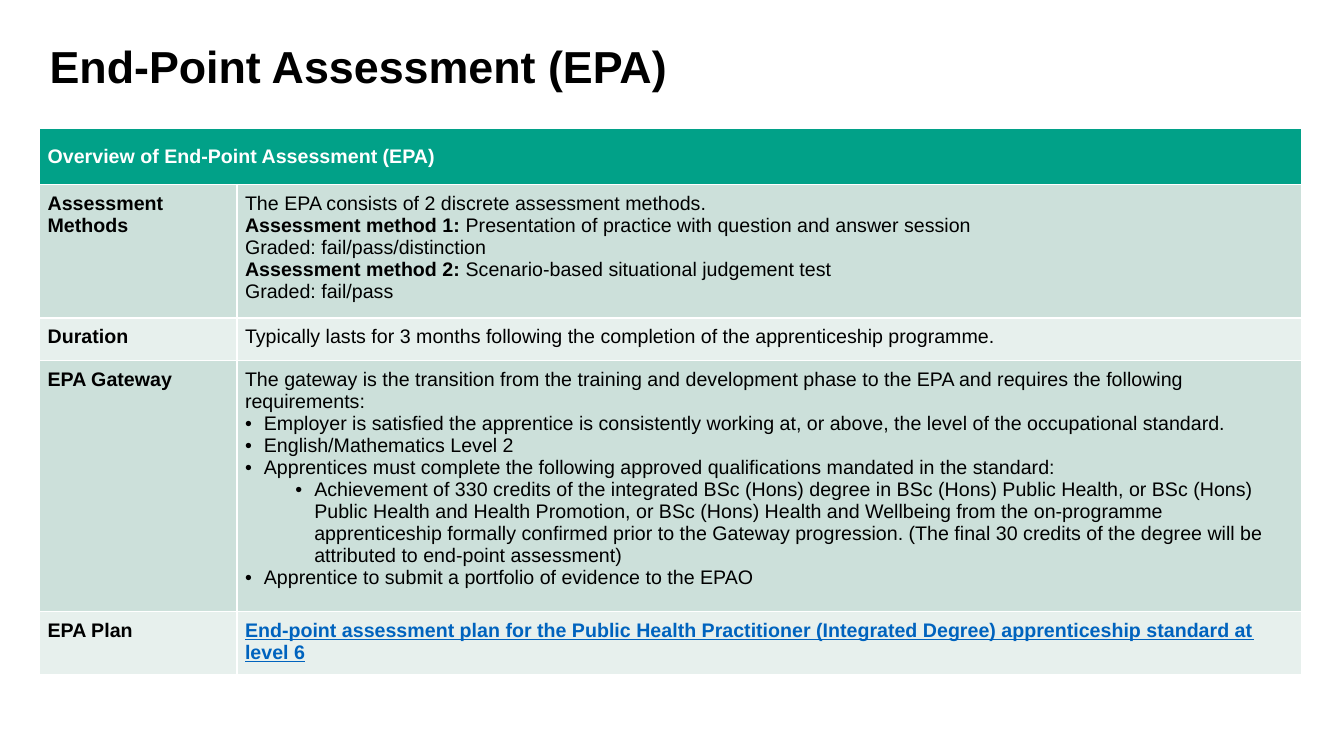
from dataclasses import dataclass

from lxml.etree import SubElement
from pptx import Presentation
from pptx.dml.color import RGBColor
from pptx.enum.text import MSO_ANCHOR
from pptx.oxml.ns import qn
from pptx.util import Pt

FONT = "Arial"
BLACK, WHITE, LINK = "000000", "FFFFFF", "0063BE"
GREEN, DARK, LIGHT = "01A188", "CCE0DA", "E7F0ED"
LEFT, WIDTH = 28.35, 901.2
COLS = (141, 760.2)
HEAD = "Overview of End-Point Assessment (EPA)"
HEAD_TALL = 40.25
PAD = 5.67
HANG = 13.5  # room for a bullet
STEP = 36  # further indent of each bullet level


@dataclass
class Para:
    text: str
    lead: str = ""
    level: int = 0  # 0 plain, 1 and up bulleted
    link: bool = False


@dataclass
class Row:
    label: str
    tall: float
    paras: list[Para]


ROWS = [
    Row("Assessment Methods", 88.75, [
        Para("The EPA consists of 2 discrete assessment methods."),
        Para("Presentation of practice with question and answer session",
             lead="Assessment method 1: "),
        Para("Graded: fail/pass/distinction"),
        Para("Scenario-based situational judgement test",
             lead="Assessment method 2: "),
        Para("Graded: fail/pass"),
    ]),
    Row("Duration", 30.5, [
        Para("Typically lasts for 3 months following the completion of the "
             "apprenticeship programme."),
    ]),
    Row("EPA Gateway", 167, [
        Para("The gateway is the transition from the training and development "
             "phase to the EPA and requires the following requirements:"),
        Para("Employer is satisfied the apprentice is consistently working at, "
             "or above, the level of the occupational standard.", level=1),
        Para("English/Mathematics Level 2", level=1),
        Para("Apprentices must complete the following approved qualifications "
             "mandated in the standard:", level=1),
        Para("Achievement of 330 credits of the integrated BSc (Hons) degree in "
             "BSc (Hons) Public Health, or BSc (Hons) Public Health and Health "
             "Promotion, or BSc (Hons) Health and Wellbeing from the "
             "on-programme apprenticeship formally confirmed prior to the "
             "Gateway progression. (The final 30 credits of the degree will be "
             "attributed to end-point assessment)", level=2),
        Para("Apprentice to submit a portfolio of evidence to the EPAO", level=1),
    ]),
    Row("EPA Plan", 31, [
        Para("End-point assessment plan for the Public Health Practitioner "
             "(Integrated Degree) apprenticeship standard at level 6", link=True),
    ]),
]


def rgb(code: str) -> RGBColor:
    return RGBColor.from_string(code)


def style(font, size: float, color: str, bold: bool) -> None:
    font.name = FONT
    font.size = Pt(size)
    font.bold = bold
    font.color.rgb = rgb(color)


def bullet(para, level: int) -> None:
    para.level = level - 1
    props = para._p.get_or_add_pPr()
    props.set("marL", str(Pt(HANG + STEP * (level - 1))))
    props.set("indent", str(Pt(-HANG)))
    SubElement(props, qn("a:buFont"), typeface=FONT)
    SubElement(props, qn("a:buChar"), char="•")


def paint(cell, fill: str) -> None:
    """Set the fill and the inner margins of a cell."""
    cell.fill.solid()
    cell.fill.fore_color.rgb = rgb(fill)
    cell.margin_left = cell.margin_right = Pt(PAD)
    cell.margin_top = cell.margin_bottom = Pt(PAD)


def label(cell, text: str, color: str) -> None:
    cell.text_frame.text = text
    style(cell.text_frame.paragraphs[0].runs[0].font, 14, color, True)


def write(cell, paras: list[Para]) -> None:
    frame = cell.text_frame
    frame.text = "\n".join(item.lead + item.text for item in paras)
    for para, item in zip(frame.paragraphs, paras):
        if item.level:
            bullet(para, item.level)
        run = para.runs[0]
        if item.lead:
            run.text = item.lead
            style(run.font, 14, BLACK, True)
            run = para.add_run()
            run.text = item.text
        style(run.font, 14, LINK if item.link else BLACK, item.link)
        if item.link:
            run.font.underline = True


def title(slide, text: str) -> None:
    frame = slide.shapes.add_textbox(
        Pt(LEFT), Pt(28.35), Pt(WIDTH), Pt(42.5)).text_frame
    frame.word_wrap = True
    frame.vertical_anchor = MSO_ANCHOR.MIDDLE
    frame.text = text
    para = frame.paragraphs[0]
    para.line_spacing = 0.9
    style(para.runs[0].font, 32, BLACK, True)


def overview(slide) -> None:
    tall = HEAD_TALL + sum(row.tall for row in ROWS)
    table = slide.shapes.add_table(
        len(ROWS) + 1, len(COLS), Pt(LEFT), Pt(91.5), Pt(WIDTH), Pt(tall)).table
    for col, wide in zip(table.columns, COLS):
        col.width = Pt(wide)

    table.rows[0].height = Pt(HEAD_TALL)
    for cell in table.rows[0].cells:
        paint(cell, GREEN)
    head = table.cell(0, 0)
    head.merge(table.cell(0, 1))
    head.vertical_anchor = MSO_ANCHOR.MIDDLE
    label(head, HEAD, WHITE)

    for num, row in enumerate(ROWS, 1):
        table.rows[num].height = Pt(row.tall)
        name, body = table.rows[num].cells
        for cell in (name, body):
            paint(cell, DARK if num % 2 else LIGHT)
        label(name, row.label, BLACK)
        write(body, row.paras)


def main() -> None:
    deck = Presentation()
    deck.slide_width, deck.slide_height = Pt(960), Pt(540)
    slide = deck.slides.add_slide(deck.slide_layouts[6])
    title(slide, "End-Point Assessment (EPA)")
    overview(slide)
    deck.save("out.pptx")


if __name__ == "__main__":
    main()
